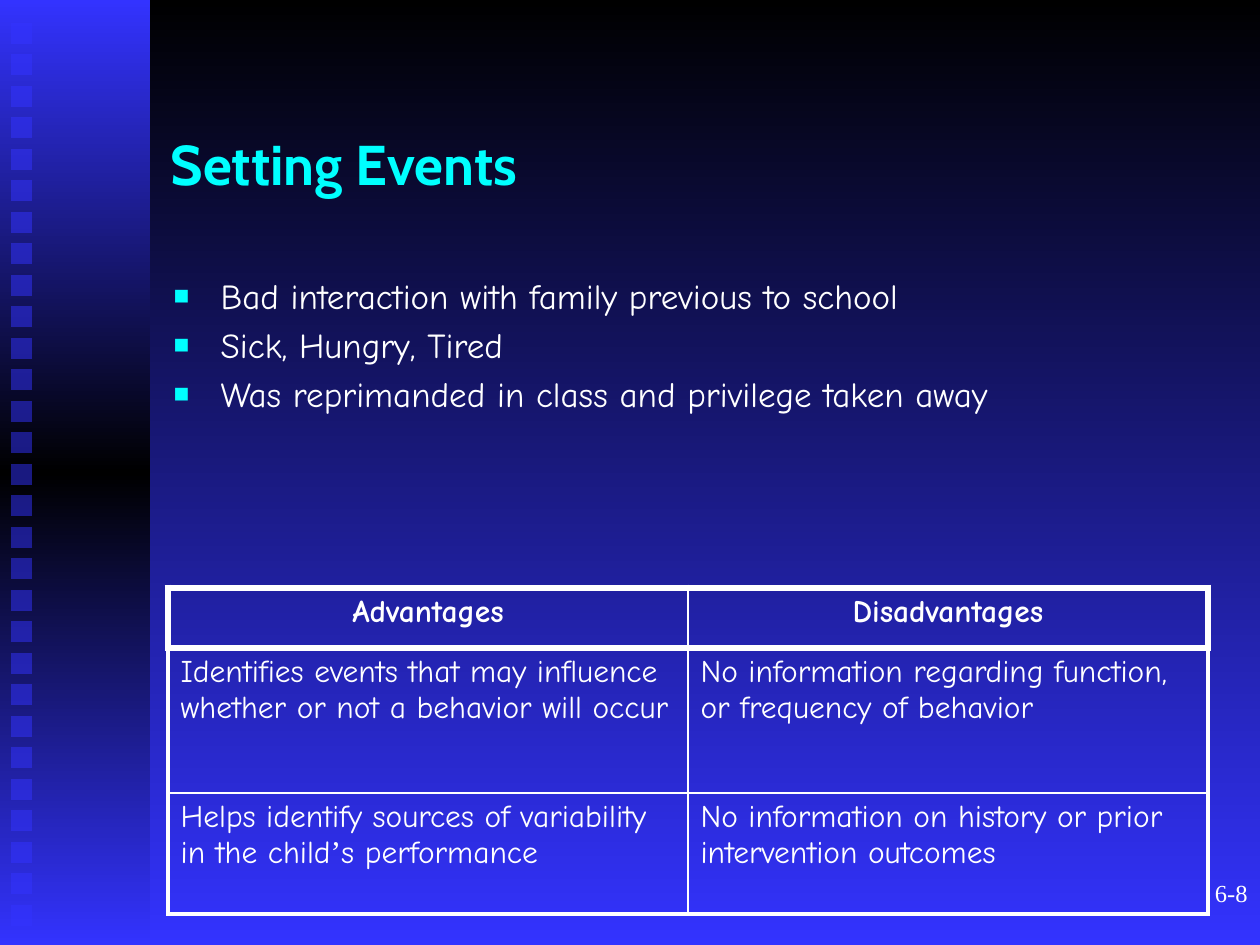
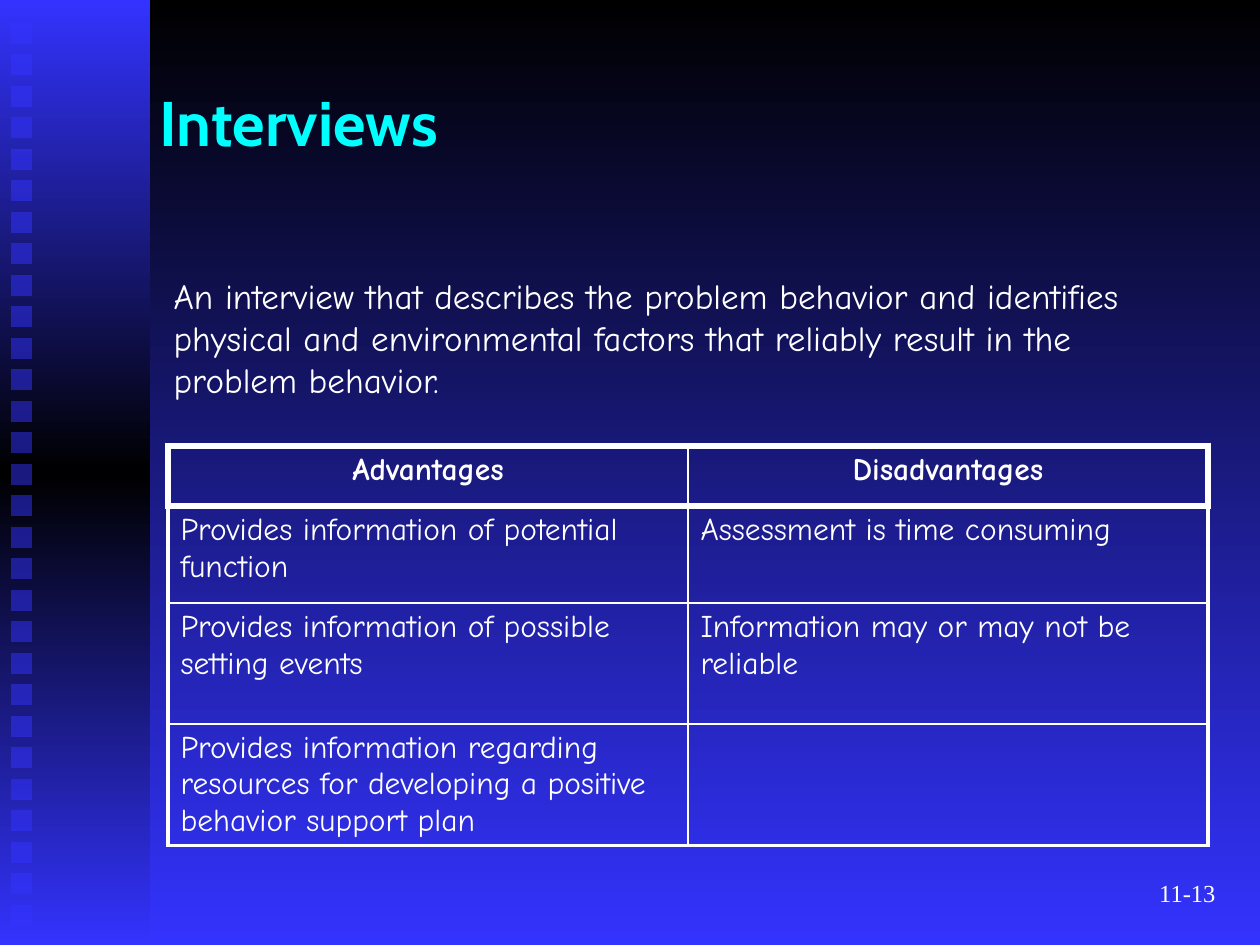
import lxml.etree
import pptx
import pptx.dml.color
import pptx.enum.shapes
import pptx.enum.text
import pptx.oxml.ns
import pptx.util

PX_PER_INCH = 126
SLIDE_WIDTH, SLIDE_HEIGHT = 1260, 945
COLORS = {"black": "000000", "blue": "3333FF", "cyan": "00FFFF", "white": "FFFFFF"}
TITLE_FONT, TEXT_FONT, NUMBER_FONT = "Cabin", "Comic Neue", "Times New Roman"
THICK, MEDIUM, THIN = 4.5, 2.25, 1
HEADER = ("Advantages", "Disadvantages")
Alignment = pptx.enum.text.PP_ALIGN
Anchor = pptx.enum.text.MSO_ANCHOR


def px(*lengths):
    """Turn px into EMU, one value for each length."""
    return [round(length * 914400 / PX_PER_INCH) for length in lengths]


def add_xml(parent, tag, **attributes):
    child = lxml.etree.SubElement(parent, pptx.oxml.ns.qn(tag))
    for name, value in attributes.items():
        child.set(name, str(value))
    return child


def fill_down(fill, owner, *color_names):
    """Give the fill of owner a vertical gradient with evenly spaced colours."""
    fill.gradient()
    fill.gradient_angle = 270
    stops = next(owner.iter(pptx.oxml.ns.qn("a:gsLst")))
    stops.clear()
    for index, name in enumerate(color_names):
        position = 100000 * index // (len(color_names) - 1)
        stop = add_xml(stops, "a:gs", pos=position)
        add_xml(stop, "a:srgbClr", val=COLORS[name])


class Deck:
    def __init__(self):
        self.presentation = pptx.Presentation()
        width, height = px(SLIDE_WIDTH, SLIDE_HEIGHT)
        self.presentation.slide_width = width
        self.presentation.slide_height = height
        master = self.presentation.slide_master
        fill_down(master.background.fill, master.element, "black", "blue")
        self.slide = None

    def new_slide(self):
        layout = self.presentation.slide_layouts[1]
        self.slide = self.presentation.slides.add_slide(layout)
        band = self.rectangle(0, 0, 150, SLIDE_HEIGHT)
        fill_down(band.fill, band.element, "blue", "black", "blue")
        for index in range(29):
            square = self.rectangle(11, 23 + 63 * index // 2, 21, 21)
            square.fill.solid()
            square.fill.fore_color.rgb = self.color("blue")
            color = next(square.element.iter(pptx.oxml.ns.qn("a:srgbClr")))
            add_xml(color, "a:alpha", val=50000)

    def color(self, name):
        return pptx.dml.color.RGBColor.from_string(COLORS[name])

    def rectangle(self, left, top, width, height):
        shape = self.slide.shapes.add_shape(
            pptx.enum.shapes.MSO_SHAPE.RECTANGLE, *px(left, top, width, height))
        shape.shadow.inherit = False
        shape.line.fill.background()
        return shape

    def style(self, paragraph, font_name, size, color="white", bold=False,
              align=Alignment.LEFT, before=0):
        paragraph.alignment = align
        paragraph.space_before = pptx.util.Pt(before)
        font = paragraph.font
        font.name, font.size, font.bold = font_name, pptx.util.Pt(size), bold
        font.color.rgb = self.color(color)

    def place(self, shape, left, top, width, height):
        shape.left, shape.top, shape.width, shape.height = px(left, top, width, height)
        shape.text_frame.word_wrap = True
        shape.text_frame.auto_size = pptx.enum.text.MSO_AUTO_SIZE.NONE

    def title(self, text, left, top, size):
        shape = self.slide.shapes.title
        self.place(shape, left, top, 1071, 158)
        shape.text_frame.vertical_anchor = Anchor.MIDDLE
        shape.text_frame.text = text
        self.style(shape.text_frame.paragraphs[0], TITLE_FONT, size, "cyan", True)

    def body(self, lines, width, height, bulleted):
        shape = self.slide.placeholders[1]
        self.place(shape, 161, 268, width, height)
        shape.text_frame.text = "\n".join(lines)
        for paragraph in shape.text_frame.paragraphs:
            self.bullet(paragraph, bulleted)
            self.style(paragraph, TEXT_FONT, 20, before=4)

    def bullet(self, paragraph, shown):
        properties = paragraph._p.get_or_add_pPr()
        indent = px(47)[0] if shown else 0
        properties.set("marL", str(indent))
        properties.set("indent", str(-indent))
        if not shown:
            add_xml(properties, "a:buNone")
            return
        add_xml(add_xml(properties, "a:buClr"), "a:srgbClr", val=COLORS["cyan"])
        add_xml(properties, "a:buSzPct", val=75000)
        add_xml(properties, "a:buChar", char="■")

    def table(self, top, row_heights, rows):
        rows = [HEADER, *rows]
        column_width = 520
        frame = self.slide.shapes.add_table(
            len(rows), 2, *px(168, top, 2 * column_width, sum(row_heights)))
        table = frame.table
        table.first_row = table.horz_banding = False
        for column in table.columns:
            column.width = px(column_width)[0]
        for row_index, texts in enumerate(rows):
            table.rows[row_index].height = px(row_heights[row_index])[0]
            for column_index, text in enumerate(texts):
                cell = table.cell(row_index, column_index)
                self.cell_text(cell, text, row_index == 0)
                self.borders(cell, row_index, column_index, len(rows) - 1)

    def cell_text(self, cell, text, is_header):
        paragraph = cell.text_frame.paragraphs[0]
        before, apostrophe, after = text.partition("’")
        for part in filter(None, (before, apostrophe, after)):
            run = paragraph.add_run()
            run.text = part
            if part == "’":
                run.font.name = NUMBER_FONT
        align = Alignment.CENTER if is_header else Alignment.LEFT
        self.style(paragraph, TEXT_FONT, 18, bold=is_header, align=align, before=3.6)

    def borders(self, cell, row, column, last_row):
        """Frame the header thickly, the table at medium width, the rest thinly."""
        outer = THICK if row == 0 else MEDIUM
        widths = {
            "a:lnL": outer if column == 0 else THIN,
            "a:lnR": outer if column == 1 else THIN,
            "a:lnT": THICK if row <= 1 else THIN,
            "a:lnB": THICK if row == 0 else MEDIUM if row == last_row else THIN,
        }
        properties = cell._tc.get_or_add_tcPr()
        for tag, width in widths.items():
            line = add_xml(properties, tag, w=pptx.util.Pt(width))
            add_xml(add_xml(line, "a:solidFill"), "a:srgbClr", val=COLORS["white"])
        cell.fill.background()

    def page_number(self, text, left):
        shape = self.slide.shapes.add_textbox(*px(left, 861, 262, 63))
        shape.text_frame.word_wrap = True
        shape.text_frame.vertical_anchor = Anchor.MIDDLE
        shape.text_frame.text = text
        self.style(shape.text_frame.paragraphs[0], NUMBER_FONT, 14,
                   align=Alignment.RIGHT)


def add_setting_events(deck):
    deck.new_slide()
    deck.title("Setting Events", 158, 84, 32)
    deck.body([
        "Bad interaction with family previous to school",
        "Sick, Hungry, Tired",
        "Was reprimanded in class and privilege taken away",
    ], 924, 253, bulleted=True)
    deck.table(588, (60, 145, 121), [
        ("Identifies events that may influence whether or not a behavior will occur",
         "No information regarding function, or frequency of behavior"),
        ("Helps identify sources of variability in the child’s performance",
         "No information on history or prior intervention outcomes"),
    ])
    deck.page_number("6-8", 998)


def add_interviews(deck):
    deck.new_slide()
    deck.title("Interviews", 147, 42, 36)
    deck.body([
        "An interview that describes the problem behavior and identifies physical "
        "and environmental factors that reliably result in the problem behavior.",
    ], 1018, 180, bulleted=False)
    deck.table(446, (60, 97, 121, 121), [
        ("Provides information of potential function",
         "Assessment is time consuming"),
        ("Provides information of possible setting events",
         "Information may or may not be reliable"),
        ("Provides information regarding resources for developing a positive "
         "behavior support plan", ""),
    ])
    deck.page_number("11-13", 966)


def main():
    deck = Deck()
    add_setting_events(deck)
    add_interviews(deck)
    deck.presentation.save("out.pptx")


if __name__ == "__main__":
    main()
